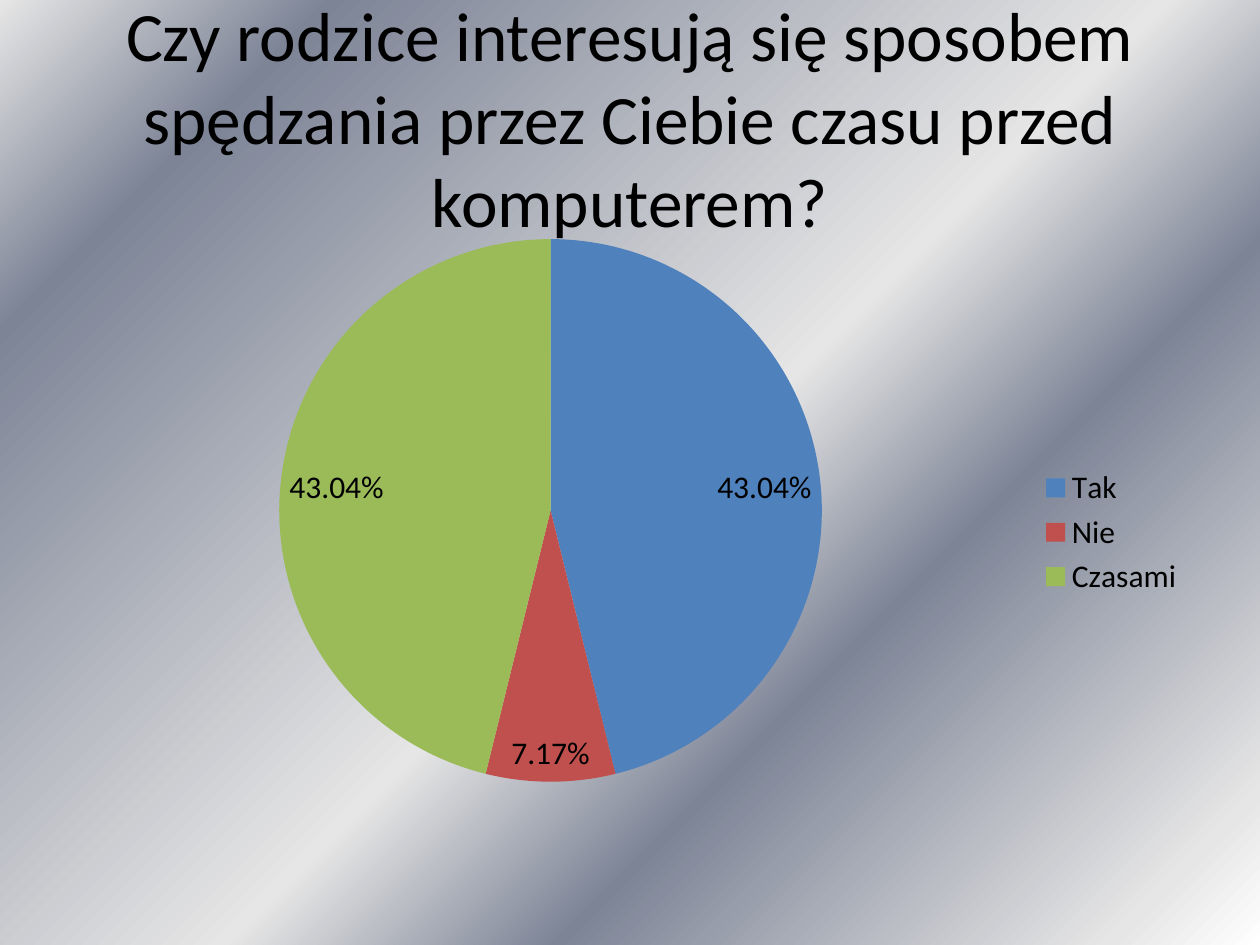
from lxml import etree
from pptx import Presentation
from pptx.chart.data import CategoryChartData
from pptx.dml.color import RGBColor
from pptx.enum.chart import XL_CHART_TYPE, XL_LABEL_POSITION, XL_LEGEND_POSITION
from pptx.enum.text import MSO_ANCHOR, PP_ALIGN
from pptx.oxml import parse_xml
from pptx.oxml.ns import nsdecls, qn
from pptx.util import Pt

PIE = XL_CHART_TYPE.PIE
BEST_FIT = XL_LABEL_POSITION.BEST_FIT
RIGHT = XL_LEGEND_POSITION.RIGHT
MIDDLE = MSO_ANCHOR.MIDDLE
CENTER = PP_ALIGN.CENTER

BLACK = RGBColor(0x00, 0x00, 0x00)
WHITE = RGBColor(0xFF, 0xFF, 0xFF)
SILVER = RGBColor(0xE6, 0xE6, 0xE6)
STEEL = RGBColor(0x7D, 0x84, 0x96)
BLUE = RGBColor(0x4F, 0x81, 0xBD)
RED = RGBColor(0xC0, 0x50, 0x4D)
GREEN = RGBColor(0x9B, 0xBB, 0x59)

QUESTION = ("Czy rodzice interesują się sposobem spędzania "
            "przez Ciebie czasu przed komputerem?")
ANSWERS = [("Tak", 0.4304, BLUE), ("Nie", 0.0717, RED), ("Czasami", 0.4304, GREEN)]
METAL = [(0, WHITE), (7, SILVER), (32, STEEL), (47, SILVER), (85, STEEL), (100, SILVER)]


class SlideBuilder:
    font_name = "Calibri"
    text_color = BLACK

    def __init__(self, page):
        self.page = page

    def style_font(self, font, size):
        font.name = self.font_name
        font.size = Pt(size)
        font.color.rgb = self.text_color

    def background(self, stops, angle):
        """Fill the background; stops are (percent, colour), angle runs counter-clockwise."""
        fill = self.page.background.fill
        fill.gradient()
        fill.gradient_angle = angle
        stop_list = next(self.page.element.iter(qn("a:gsLst")))
        for old_stop in list(stop_list):
            stop_list.remove(old_stop)
        for percent, color in stops:
            stop = etree.SubElement(stop_list, qn("a:gs"), pos=str(percent * 1000))
            etree.SubElement(stop, qn("a:srgbClr"), val=str(color))

    def title(self, text, left, top, width, height, size):
        box = self.page.shapes.add_textbox(Pt(left), Pt(top), Pt(width), Pt(height))
        frame = box.text_frame
        frame.word_wrap = True
        frame.vertical_anchor = MIDDLE
        frame.text = text
        para = frame.paragraphs[0]
        para.alignment = CENTER
        self.style_font(para.runs[0].font, size)

    def pie(self, answers, left, top, width, height, size, plot_area):
        """Add a pie chart; plot_area holds x, y, w, h as shares of the chart."""
        data = CategoryChartData(number_format="0.00%")
        data.categories = [name for name, _, _ in answers]
        data.add_series("Series 1", [share for _, share, _ in answers])
        chart = self.page.shapes.add_chart(
            PIE, Pt(left), Pt(top), Pt(width), Pt(height), data).chart
        self.style_font(chart.font, size)
        chart.has_title = False
        chart.has_legend = True
        chart.legend.position = RIGHT
        chart.legend.include_in_layout = False

        plot = chart.plots[0]
        plot.vary_by_categories = True
        for index, (_, _, color) in enumerate(answers):
            fill = plot.series[0].points[index].format.fill
            fill.solid()
            fill.fore_color.rgb = color

        plot.has_data_labels = True
        labels = plot.data_labels
        labels.show_value = True
        labels.show_percentage = False
        labels.number_format = "0.00%"
        labels.number_format_is_linked = False
        labels.position = BEST_FIT
        self.style_font(labels.font, size)
        self.place_plot(chart, plot_area)

    def place_plot(self, chart, plot_area):
        area = next(chart.element.iter(qn("c:plotArea")))
        for old_layout in area.findall(qn("c:layout")):
            area.remove(old_layout)
        shares = "".join(f'<c:{key} val="{share}"/>' for key, share in zip("xywh", plot_area))
        area.insert(0, parse_xml(
            f'<c:layout {nsdecls("c")}><c:manualLayout><c:layoutTarget val="inner"/>'
            f'<c:xMode val="edge"/><c:yMode val="edge"/>{shares}'
            '</c:manualLayout></c:layout>'))


def main():
    deck = Presentation()
    deck.slide_width, deck.slide_height = Pt(720), Pt(540)
    builder = SlideBuilder(deck.slides.add_slide(deck.slide_layouts[6]))
    builder.background(METAL, angle=135)
    builder.title(QUESTION, 36, 21.6, 648, 90, size=39.6)
    builder.pie(ANSWERS, 36, 126, 648, 356.4, size=18, plot_area=(0.19, 0.03, 0.48, 0.87))
    deck.save("out.pptx")


if __name__ == "__main__":
    main()
